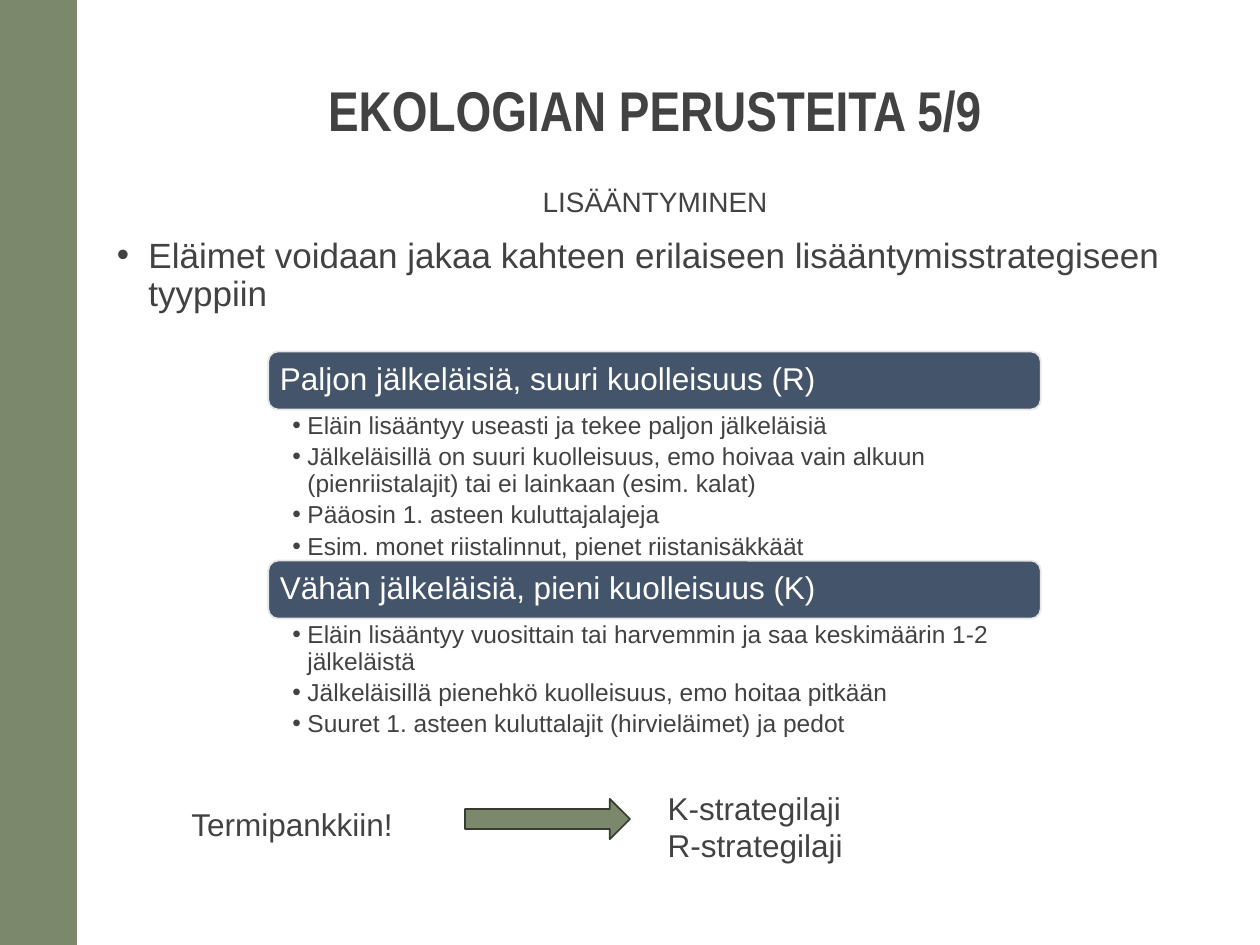
from lxml import etree
from pptx import Presentation
from pptx import util as u
from pptx.dml.color import RGBColor
from pptx.enum import shapes, text
from pptx.oxml.ns import qn

INK = {"text": "424242", "green": "7B886B", "edge": "363C2F",
       "navy": "44546A", "rim": "E7E6E6", "white": "FFFFFF"}
KIND = shapes.MSO_SHAPE
MID = text.MSO_ANCHOR.MIDDLE
MID_X = text.PP_ALIGN.CENTER
PAD = (0.1, 0.05, 0.1, 0.05)
LEFT, WIDE, BAR = 2.13, 6.13, 0.46
GROUPS = [
    (2.79, 1.2, "Paljon jälkeläisiä, suuri kuolleisuus (R)", [
        "Eläin lisääntyy useasti ja tekee paljon jälkeläisiä",
        "Jälkeläisillä on suuri kuolleisuus, emo hoivaa vain alkuun "
        "(pienriistalajit) tai ei lainkaan (esim. kalat)",
        "Pääosin 1. asteen kuluttajalajeja",
        "Esim. monet riistalinnut, pienet riistanisäkkäät"]),
    (4.45, 0.96, "Vähän jälkeläisiä, pieni kuolleisuus (K)", [
        "Eläin lisääntyy vuosittain tai harvemmin ja saa keskimäärin 1-2 "
        "jälkeläistä",
        "Jälkeläisillä pienehkö kuolleisuus, emo hoitaa pitkään",
        "Suuret 1. asteen kuluttalajit (hirvieläimet) ja pedot"]),
]


def color(name):
    return RGBColor.from_string(INK[name])


def add_dot(para, indent):
    props = para._p.get_or_add_pPr()
    props.set("marL", str(u.Inches(indent)))
    props.set("indent", str(-u.Inches(indent)))
    etree.SubElement(props, qn("a:buFont")).set("typeface", "Arial")
    etree.SubElement(props, qn("a:buChar")).set("char", "•")


def write(shape, lines, size, ink="text", face="Arial", bold=False, align=None,
          anchor=text.MSO_ANCHOR.TOP, pad=PAD, wrap=True, dot=0, gap=0, lead=0.9):
    frame = shape.text_frame
    frame.word_wrap = wrap
    frame.vertical_anchor = anchor
    (frame.margin_left, frame.margin_top,
     frame.margin_right, frame.margin_bottom) = map(u.Inches, pad)
    for i, line in enumerate(lines):
        para = frame.add_paragraph() if i else frame.paragraphs[0]
        para.alignment = align or text.PP_ALIGN.LEFT
        para.line_spacing = lead
        para.space_after = u.Pt(gap)
        if dot:
            add_dot(para, dot)
        run = para.add_run()
        run.text = line
        run.font.size = u.Pt(size)
        run.font.name = face
        run.font.bold = bold
        run.font.color.rgb = color(ink)


def add_text(slide, area, lines, size, **style):
    box = slide.shapes.add_textbox(*map(u.Inches, area))
    write(box, lines, size, **style)


def add_form(slide, kind, area, fill, line=None):
    form = slide.shapes.add_shape(kind, *map(u.Inches, area))
    form.shadow.inherit = False
    form.fill.solid()
    form.fill.fore_color.rgb = color(fill)
    if line:
        form.line.color.rgb = color(line)
        form.line.width = u.Pt(1)
    else:
        form.line.fill.background()
    return form


def add_group(slide, top, high, head, points):
    bar = add_form(slide, KIND.ROUNDED_RECTANGLE, (LEFT, top, WIDE, BAR),
                   "navy", "rim")
    write(bar, [head], 18, ink="white", anchor=MID, pad=(0.07, 0.07, 0.07, 0.07))
    add_text(slide, (LEFT, top + BAR, WIDE, high), points, 14,
             pad=(0.19, 0.03, 0.14, 0.03), dot=0.12, gap=2.8)


def main():
    deck = Presentation()
    deck.slide_width, deck.slide_height = u.Inches(10), u.Inches(7.5)
    slide = deck.slides.add_slide(deck.slide_layouts[6])
    add_form(slide, KIND.RECTANGLE, (0, 0, 0.61, 7.5), "green")
    add_text(slide, (0.83, 0.4, 8.74, 1), ["EKOLOGIAN PERUSTEITA 5/9"], 32,
             face="Arial Narrow", bold=True, align=MID_X, anchor=MID)
    add_text(slide, (0.83, 1.49, 8.74, 0.25), ["LISÄÄNTYMINEN"], 16,
             align=MID_X, anchor=MID, pad=(0, 0, 0, 0), wrap=False)
    add_text(slide, (0.83, 1.84, 8.74, 0.8),
             ["Eläimet voidaan jakaa kahteen erilaiseen "
              "lisääntymisstrategiseen tyyppiin"], 20, dot=0.25)
    for group in GROUPS:
        add_group(slide, *group)
    add_text(slide, (1.42, 6.34, 2.15, 0.4), ["Termipankkiin!"], 18, lead=1)
    add_form(slide, KIND.RIGHT_ARROW, (3.69, 6.34, 1.31, 0.32), "green", "edge")
    add_text(slide, (5.2, 6.21, 2.71, 1.01),
             ["K-strategilaji", "R-strategilaji"], 18, lead=1)
    deck.save("out.pptx")


if __name__ == "__main__":
    main()
